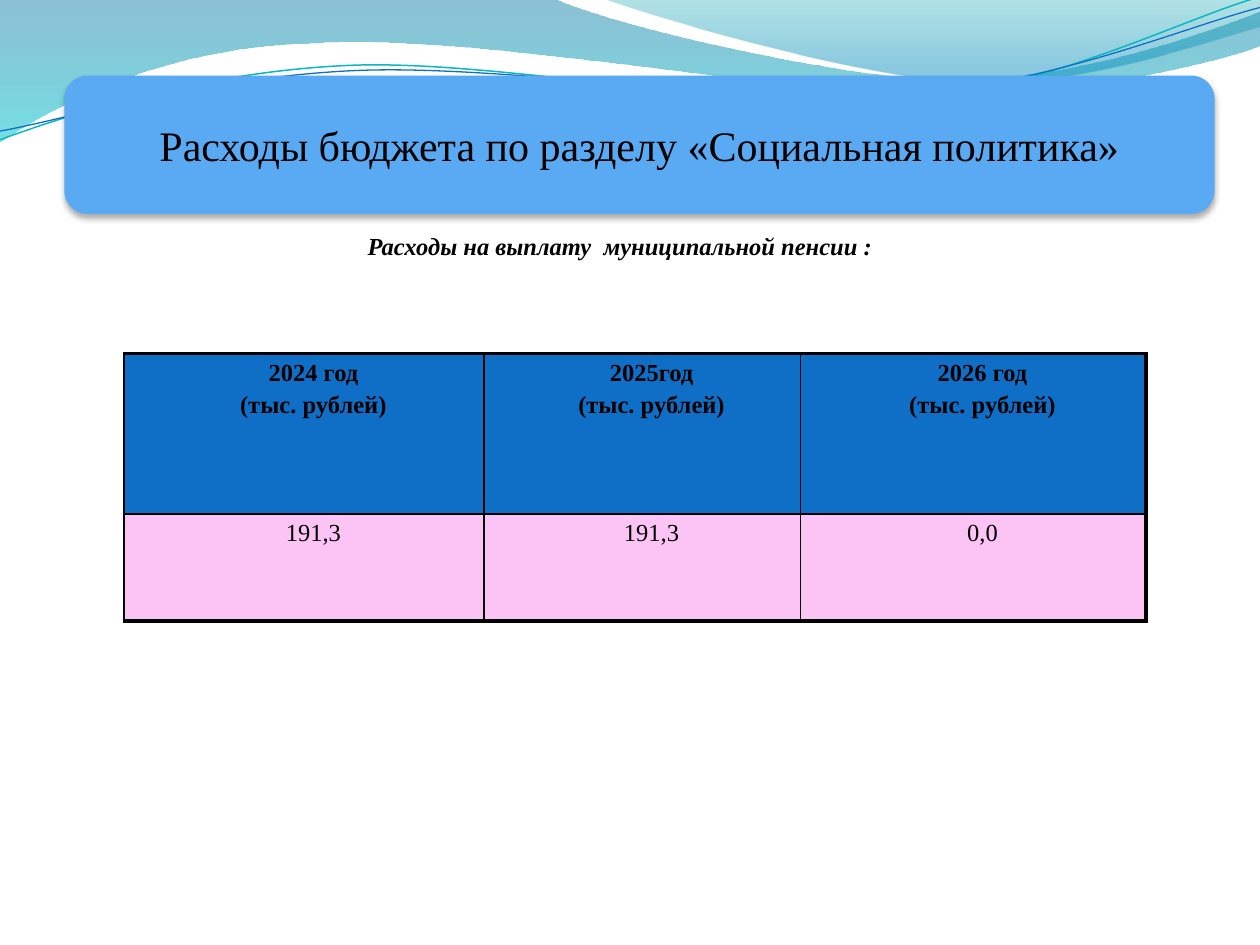
from dataclasses import dataclass
from math import cos, radians, sin

from pptx import Presentation
from pptx.dml.color import RGBColor
from pptx.enum.shapes import MSO_SHAPE
from pptx.enum.text import MSO_ANCHOR, PP_ALIGN
from pptx.oxml import parse_xml
from pptx.oxml.ns import nsdecls
from pptx.util import Pt

ROUNDED = MSO_SHAPE.ROUNDED_RECTANGLE
CENTER = PP_ALIGN.CENTER
MIDDLE = MSO_ANCHOR.MIDDLE


@dataclass(frozen=True)
class Theme:
    font: str = "Times New Roman"
    title_size: float = 24
    body_size: float = 14
    ink: str = "000000"
    banner: str = "59AAF2"
    header: str = "0F6FC6"
    values: str = "FCC4F4"
    teal_line: str = "0AB8BF"
    blue_line: str = "0F6FC6"
    deep_wave: tuple = ((0, "0074A1", 45), (1, "00C6CF", 55))
    pale_wave: tuple = ((0, "00A1A9", 30), (0.8, "008BBF", 45))
    thin: float = 1
    thick: float = 2.25


TILT = -2.7
DEEP_WAVE = [
    (0, 0), (316.8, -0.7),
    (342.7, 12.2, 478.1, 45.4, 545.8, 45.4), (614.2, 45.4, 689.8, 18.7, 720, 6.5),
    (720.7, 25.9), (707.8, 31.7, 626.4, 54.7, 537.1, 54),
    (447.8, 54, 275, 20.2, 185, 24.5), (92.9, 25.9, 33.1, 59.8, -0.7, 81.4),
]
PALE_WAVE = [
    (344.9, -0.7), (366.5, 7.9, 491, 44.6, 553.7, 46.8),
    (616.3, 49.7, 691.9, 23, 720, 15.1), (720, 0),
]
TEAL_CURVE = [
    (0, 79.9), (34.6, 67, 113.8, 41, 199.4, 37.4),
    (284.4, 33.8, 427, 64.1, 513.4, 57.6), (599.8, 51.1, 675.4, 10.8, 718.6, -1.4),
]
BLUE_CURVE = [
    (0, 74.9), (33.8, 69.1, 118.1, 43.9, 203.8, 40.3),
    (290.2, 36.7, 429.8, 60.5, 516.2, 54), (601.9, 48.2, 677.5, 15.1, 720, 4.3),
]
PENSION_ROWS = [
    ["2024 год\n(тыс. рублей)", "2025год\n(тыс. рублей)", "2026 год\n(тыс. рублей)"],
    ["191,3", "191,3", "0,0"],
]


def pairs(segment):
    """Split a flat segment into its points."""
    return list(zip(segment[::2], segment[1::2]))


def turn(segments, angle, center):
    """Rotate every point of the segments about the center."""
    cx, cy = center
    c, s = cos(radians(angle)), sin(radians(angle))
    return [
        tuple(value for x, y in pairs(segment)
              for value in (cx + (x - cx) * c - (y - cy) * s,
                            cy + (x - cx) * s + (y - cy) * c))
        for segment in segments
    ]


class Composer:
    """Draws styled elements on the current page."""

    def __init__(self, page, theme):
        self.page = page
        self.theme = theme

    def outline(self, segments, close):
        anchors = [(Pt(x), Pt(y)) for x, y in (segment[-2:] for segment in segments)]
        builder = self.page.shapes.build_freeform(*anchors[0], scale=1.0)
        builder.add_line_segments(anchors[1:], close=close)
        shape = builder.convert_to_shape()
        shape.shadow.inherit = False
        for node, segment in zip(shape.element.xpath(".//a:lnTo"), segments[1:]):
            if len(segment) == 6:
                points = "".join(f'<a:pt x="{Pt(x) - shape.left}" y="{Pt(y) - shape.top}"/>'
                                 for x, y in pairs(segment))
                node.getparent().replace(node, parse_xml(
                    f'<a:cubicBezTo {nsdecls("a")}>{points}</a:cubicBezTo>'))
        return shape

    def wave(self, segments, stops):
        shape = self.outline(segments, close=True)
        shape.line.fill.background()
        shape.fill.gradient()
        shape.fill.gradient_angle = 270
        for stop, (position, color, _) in zip(shape.fill.gradient_stops, stops):
            stop.position = position
            stop.color.rgb = RGBColor.from_string(color)
        colors = shape.element.spPr.xpath(".//a:gs/a:srgbClr")
        for node, (_, _, opacity) in zip(colors, stops):
            node.append(parse_xml(f'<a:alpha {nsdecls("a")} val="{opacity * 1000}"/>'))

    def curve(self, segments, color, width):
        shape = self.outline(turn(segments, -TILT, (360, 42)), close=False)
        shape.rotation = TILT
        shape.fill.background()
        shape.line.color.rgb = RGBColor.from_string(color)
        shape.line.width = Pt(width)

    def style_text(self, frame, size, bold=False, italic=False):
        for para in frame.paragraphs:
            para.alignment = CENTER
            for span in para.runs:
                span.font.name = self.theme.font
                span.font.size = Pt(size)
                span.font.bold = bold
                span.font.italic = italic
                span.font.color.rgb = RGBColor.from_string(self.theme.ink)

    def banner(self, text, left, top, width, height):
        box = self.page.shapes.add_shape(ROUNDED, Pt(left), Pt(top), Pt(width), Pt(height))
        box.fill.solid()
        box.fill.fore_color.rgb = RGBColor.from_string(self.theme.banner)
        box.line.fill.background()
        box.element.spPr.append(parse_xml(
            f'<a:effectLst {nsdecls("a")}><a:outerShdw blurRad="{Pt(3.5)}" dist="{Pt(2.2)}" '
            f'dir="5400000" rotWithShape="0"><a:srgbClr val="{self.theme.ink}">'
            '<a:alpha val="32000"/></a:srgbClr></a:outerShdw></a:effectLst>'))
        box.text_frame.text = text
        box.text_frame.word_wrap = True
        box.text_frame.vertical_anchor = MIDDLE
        self.style_text(box.text_frame, self.theme.title_size)

    def caption(self, text, left, top, width, height):
        box = self.page.shapes.add_textbox(Pt(left), Pt(top), Pt(width), Pt(height))
        box.text_frame.text = text
        box.text_frame.word_wrap = True
        self.style_text(box.text_frame, self.theme.body_size, bold=True, italic=True)

    def border(self, cell, side, width):
        cell._tc.get_or_add_tcPr().append(parse_xml(
            f'<a:ln{side} {nsdecls("a")} w="{Pt(width)}"><a:solidFill>'
            f'<a:srgbClr val="{self.theme.ink}"/></a:solidFill></a:ln{side}>'))

    def table(self, rows, left, top, widths, heights):
        theme = self.theme
        frame = self.page.shapes.add_table(len(rows), len(widths), Pt(left), Pt(top),
                                           Pt(sum(widths)), Pt(sum(heights)))
        grid = frame.table
        for column, width in zip(grid.columns, widths):
            column.width = Pt(width)
        for r, (texts, height) in enumerate(zip(rows, heights)):
            grid.rows[r].height = Pt(height)
            for c, text in enumerate(texts):
                cell = grid.cell(r, c)
                cell.text = text
                self.style_text(cell.text_frame, theme.body_size, bold=r == 0)
                for para in cell.text_frame.paragraphs:
                    para.space_before = Pt(2.8)
                    para._p.get_or_add_pPr().set("marL", str(Pt(10.8)))
                heavy = {"R": c == len(widths) - 1, "T": r == 0, "B": r == len(rows) - 1}
                for side in "LRTB":
                    self.border(cell, side, theme.thick if heavy.get(side) else theme.thin)
                cell.fill.solid()
                cell.fill.fore_color.rgb = RGBColor.from_string(
                    theme.header if r == 0 else theme.values)


def main():
    deck = Presentation()
    deck.slide_width, deck.slide_height = Pt(720), Pt(540)
    theme = Theme()
    composer = Composer(deck.slides.add_slide(deck.slide_layouts[6]), theme)
    composer.wave(DEEP_WAVE, theme.deep_wave)
    composer.wave(PALE_WAVE, theme.pale_wave)
    composer.curve(TEAL_CURVE, theme.teal_line, 0.85)
    composer.curve(BLUE_CURVE, theme.blue_line, 0.75)
    composer.banner("Расходы бюджета по разделу «Социальная политика»", 36.8, 43.2, 657.2, 79)
    composer.caption("Расходы на выплату  муниципальной пенсии :", 19.8, 128.2, 669, 24.5)
    composer.table(PENSION_ROWS, 70.9, 202, [205.6, 180.9, 197.4], [91.6, 61.2])
    deck.save("out.pptx")


if __name__ == "__main__":
    main()
